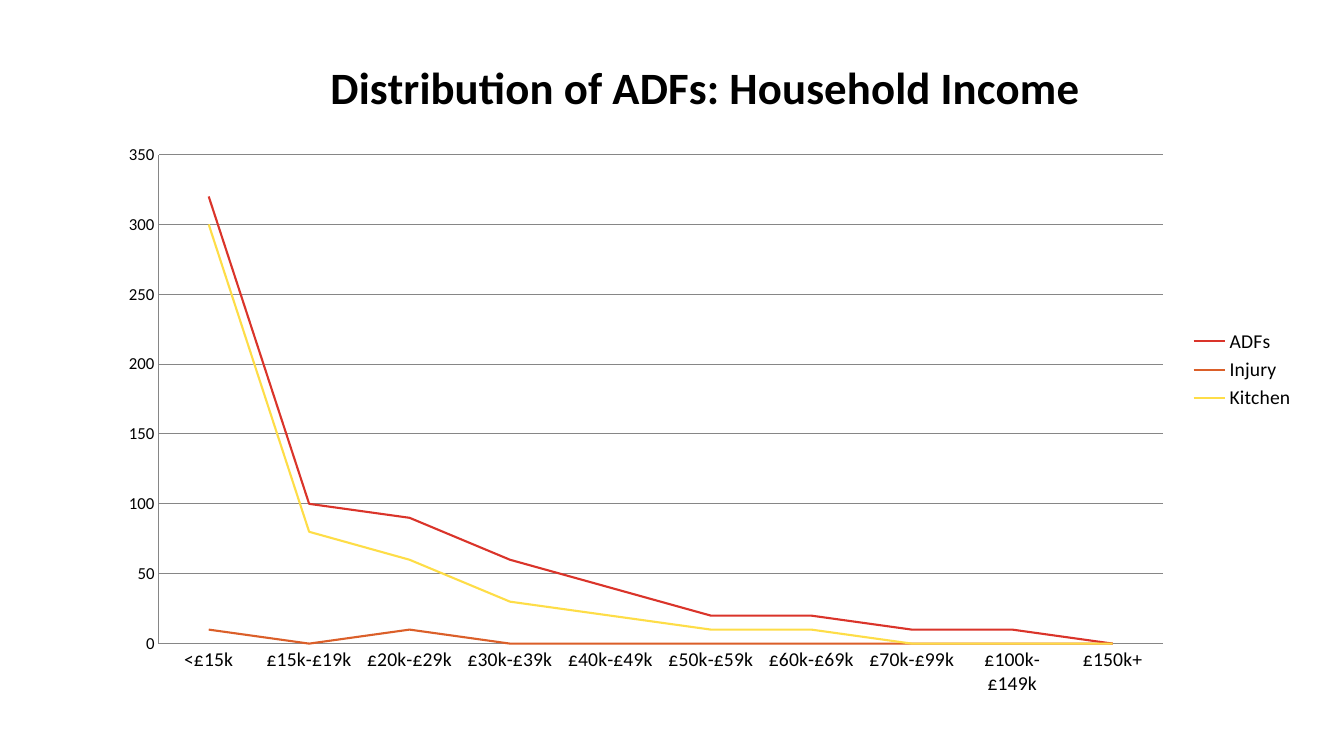
from lxml import etree
from pptx import Presentation
from pptx.chart.data import CategoryChartData
from pptx.dml.color import RGBColor
from pptx.enum.chart import XL_CHART_TYPE, XL_LEGEND_POSITION, XL_TICK_MARK
from pptx.oxml.ns import qn
from pptx.util import Pt

BLACK = RGBColor(0x00, 0x00, 0x00)
GREY = RGBColor(0x86, 0x86, 0x86)
RED = RGBColor(0xDA, 0x34, 0x2A)
ORANGE = RGBColor(0xDB, 0x5F, 0x29)
YELLOW = RGBColor(0xFE, 0xDD, 0x47)
FONT = "Calibri"

INCOME_BANDS = ["<£15k", "£15k-£19k", "£20k-£29k", "£30k-£39k", "£40k-£49k",
                "£50k-£59k", "£60k-£69k", "£70k-£99k", "£100k-£149k", "£150k+"]
SERIES = [
    ("ADFs", RED, [320, 100, 90, 60, 40, 20, 20, 10, 10, 0]),
    ("Injury", ORANGE, [10, 0, 10, 0, 0, 0, 0, 0, 0, 0]),
    ("Kitchen", YELLOW, [300, 80, 60, 30, 20, 10, 10, 0, 0, 0]),
]


def set_font(font, size, bold=False):
    font.name = FONT
    font.size = Pt(size)
    font.bold = bold
    font.color.rgb = BLACK


def set_line(line, color, width):
    line.color.rgb = color
    line.width = Pt(width)


def set_layout(element, index, settings):
    """Give a chart part a manual layout, as its child number index."""
    for old in element.findall(qn("c:layout")):
        element.remove(old)
    layout = etree.Element(qn("c:layout"))
    manual = etree.SubElement(layout, qn("c:manualLayout"))
    for name, value in settings.items():
        etree.SubElement(manual, qn(f"c:{name}")).set("val", str(value))
    element.insert(index, layout)


def format_title(chart, x, y):
    tf = chart.chart_title.text_frame
    tf.text = "Distribution of ADFs: Household Income"
    set_font(tf.paragraphs[0].runs[0].font, 32, bold=True)
    chart.chart_title.include_in_layout = False
    set_layout(chart.chart_title._element, 1,
               {"xMode": "edge", "yMode": "edge", "x": x, "y": y})


def format_axes(chart):
    for axis, size in ((chart.category_axis, 14), (chart.value_axis, 12)):
        axis.major_tick_mark = XL_TICK_MARK.NONE
        axis.minor_tick_mark = XL_TICK_MARK.NONE
        set_font(axis.tick_labels.font, size)
        set_line(axis.format.line, GREY, 0.75)
    axis = chart.value_axis
    axis.minimum_scale, axis.maximum_scale, axis.major_unit = 0, 350, 50
    axis.has_major_gridlines = True
    set_line(axis.major_gridlines.format.line, GREY, 0.75)


def add_income_chart(slide, left, top, width, height):
    data = CategoryChartData()
    data.categories = INCOME_BANDS
    for name, _, values in SERIES:
        data.add_series(name, values)
    chart = slide.shapes.add_chart(XL_CHART_TYPE.LINE, Pt(left), Pt(top),
                                   Pt(width), Pt(height), data).chart
    set_font(chart.font, 10)
    format_title(chart, 155.3 / width, 13 / height)
    format_axes(chart)

    chart.plots[0].vary_by_categories = False
    for series, (_, color, _) in zip(chart.plots[0].series, SERIES):
        series.smooth = False
        set_line(series.format.line, color, 1.5)

    chart.has_legend = True
    chart.legend.position = XL_LEGEND_POSITION.RIGHT
    chart.legend.include_in_layout = False
    set_font(chart.legend.font, 14)

    plot_area = chart._chartSpace.find(".//" + qn("c:plotArea"))
    set_layout(plot_area, 0, {
        "layoutTarget": "inner", "xMode": "edge", "yMode": "edge",
        "x": 38.2 / width, "y": 89.4 / height,
        "w": 717.5 / width, "h": 349.4 / height})


def main():
    prs = Presentation()
    prs.slide_width, prs.slide_height = Pt(960), Pt(540)
    slide = prs.slides.add_slide(prs.slide_layouts[6])
    add_income_chart(slide, 75, 21, 857.5, 486)
    prs.save("out.pptx")


if __name__ == "__main__":
    main()
